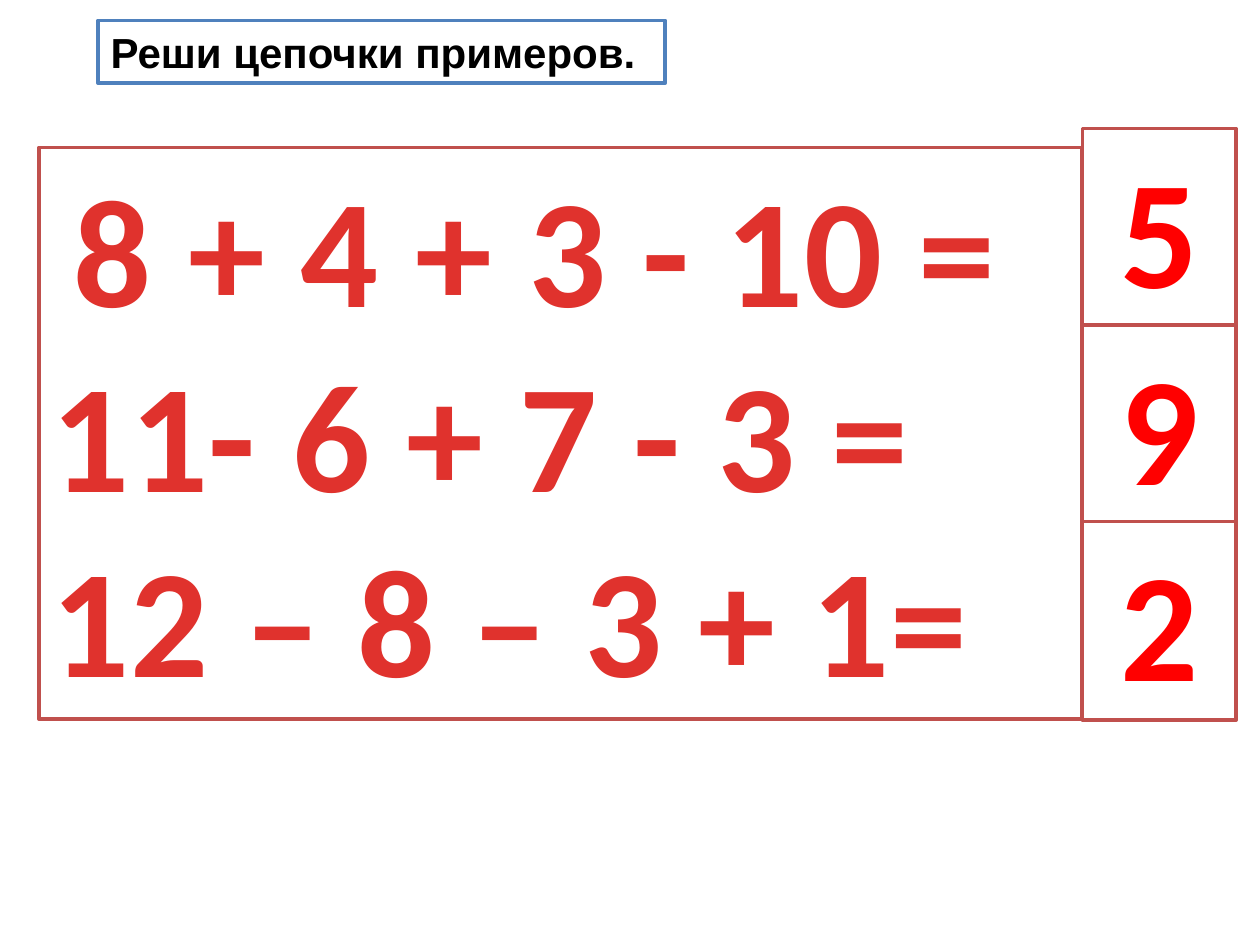
from pptx import Presentation
from pptx.dml.color import RGBColor
from pptx.enum.shapes import MSO_SHAPE
from pptx.enum.text import MSO_ANCHOR, PP_ALIGN
from pptx.util import Cm, Pt

WHITE = RGBColor(0xFF, 0xFF, 0xFF)
BLACK = RGBColor(0x00, 0x00, 0x00)
BLUE = RGBColor(0x4F, 0x81, 0xBD)
BRICK = RGBColor(0xC0, 0x50, 0x4D)
CRIMSON = RGBColor(0xE0, 0x32, 0x2D)
RED = RGBColor(0xFF, 0x00, 0x00)

EXAMPLES = ["8 + 4 + 3 - 10 =", "11- 6 + 7 - 3 =", "12 – 8 – 3 + 1="]
ANSWERS = ["5", "9", "2"]
ANSWER_TOP = 2.59
ANSWER_PITCH = 3.96


def add_frame(page, left, top, width, height, line_color):
    """Add a white outlined rectangle and return its text frame."""
    box = page.shapes.add_shape(
        MSO_SHAPE.RECTANGLE, Cm(left), Cm(top), Cm(width), Cm(height))
    box.shadow.inherit = False
    box.fill.solid()
    box.fill.fore_color.rgb = WHITE
    box.line.color.rgb = line_color
    box.line.width = Pt(2)
    box.text_frame.word_wrap = True
    box.text_frame.vertical_anchor = MSO_ANCHOR.TOP
    return box.text_frame


def add_span(para, text, font, size, color, spacing=0):
    """Add a bold run; spacing is in hundredths of a point."""
    span = para.add_run()
    span.text = text
    span.font.name = font
    span.font.size = Pt(size)
    span.font.bold = True
    span.font.color.rgb = color
    if spacing:
        span.font._element.set("spc", str(spacing))


def add_title(page):
    para = add_frame(page, 1.98, 0.41, 11.43, 1.27, BLUE).paragraphs[0]
    para.alignment = PP_ALIGN.LEFT
    add_span(para, "Реши цепочки примеров.", "Arial", 24, BLACK)


def add_examples(page):
    frame = add_frame(page, 0.79, 2.97, 21.01, 11.53, BRICK)
    for index, example in enumerate(EXAMPLES):
        para = frame.add_paragraph() if index else frame.paragraphs[0]
        para.alignment = PP_ALIGN.LEFT
        if index == 0:
            # The first example starts slightly to the right
            add_span(para, " ", "Calibri", 54, CRIMSON, 50)
        add_span(para, example, "Calibri", 88, CRIMSON, 50)


def add_answer(page, row, answer):
    top = ANSWER_TOP + row * ANSWER_PITCH
    para = add_frame(page, 21.82, top, 3.1, 4.01, BRICK).paragraphs[0]
    para.alignment = PP_ALIGN.CENTER
    add_span(para, answer, "Calibri", 88, RED, 50)


def main():
    deck = Presentation()
    deck.slide_width = Cm(25.4)
    deck.slide_height = Cm(19.05)
    page = deck.slides.add_slide(deck.slide_layouts[6])

    # Task and chains of sums
    add_title(page)
    add_examples(page)

    # Column of answers
    for row, answer in enumerate(ANSWERS):
        add_answer(page, row, answer)

    deck.save("out.pptx")


if __name__ == "__main__":
    main()
